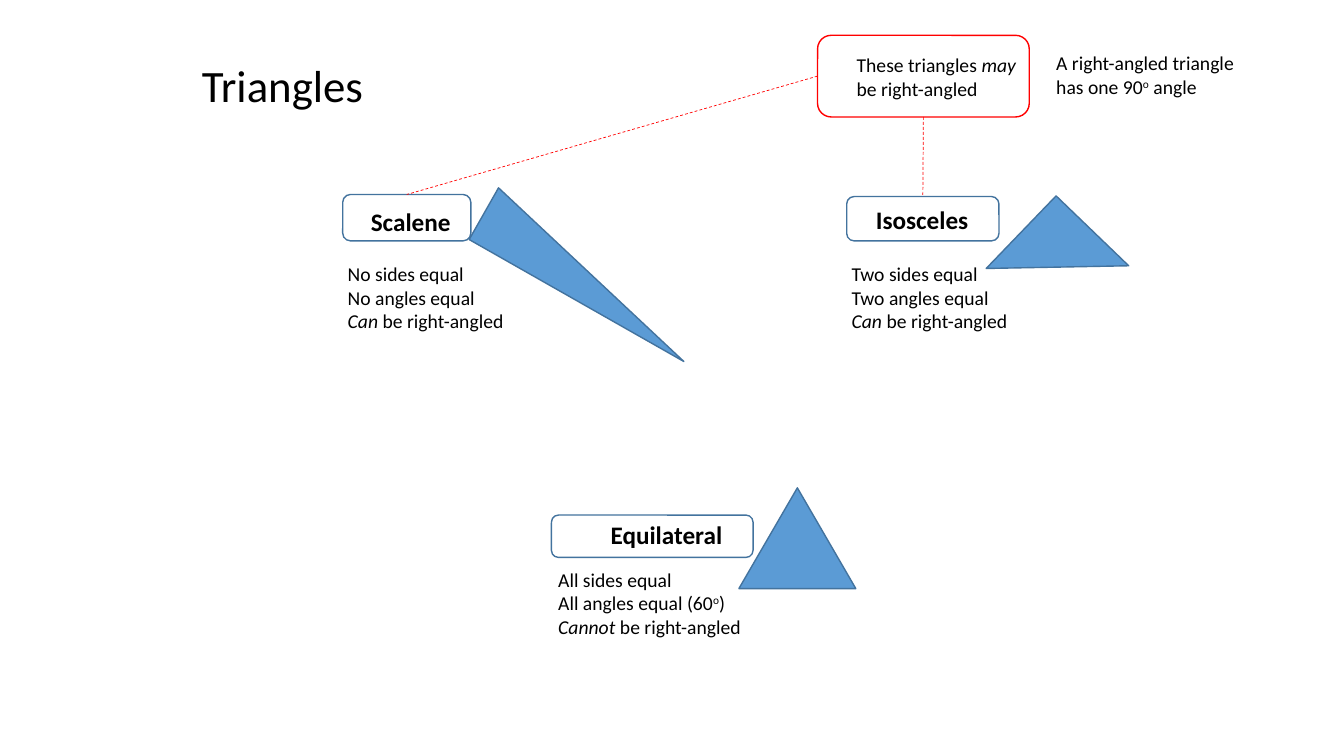
"""Build a slide that sorts triangles into scalene, isosceles and equilateral."""
import pptx
import pptx.dml.color
import pptx.enum.dml
import pptx.enum.shapes
import pptx.enum.text
import pptx.oxml.ns
import pptx.util
from lxml import etree

SHAPE = pptx.enum.shapes.MSO_SHAPE
BLUE, EDGE, RED, BLACK = "5B9BD5", "43739E", "FF0000", "000000"

prs = pptx.Presentation()
prs.slide_width = pptx.util.Inches(13.33)
prs.slide_height = pptx.util.Inches(7.5)
COL, ROW = prs.slide_width / 100, prs.slide_height / 100
s = prs.slides.add_slide(prs.slide_layouts[5])


def paint(fmt, color):
    fill = fmt if hasattr(fmt, "solid") else fmt.fill
    fill.solid()
    fill.fore_color.rgb = pptx.dml.color.RGBColor.from_string(color)


def grid(left, top, width, height):
    return [round(v) for v in (left * COL, top * ROW, width * COL, height * ROW)]


title = s.shapes.title
title.left, title.top, title.width, title.height = grid(5.92, 3.2, 86.25, 16.93)
tf = title.text_frame
tf.text = "Triangles"
tf.vertical_anchor = pptx.enum.text.MSO_ANCHOR.MIDDLE
tf.margin_left = round(9.1 * COL)
p = tf.paragraphs[0]
p.alignment = pptx.enum.text.PP_ALIGN.LEFT
p.line_spacing = 0.9
p.font.size = pptx.util.Pt(32)
p.font.name = "Calibri"
paint(p.font, BLACK)

boxes = {}
for name, place, color in [
    ("isosceles", (63, 26, 11.33, 5.87), EDGE),
    ("scalene", (25.5, 25.73, 9.53, 6.13), EDGE),
    ("right-angled", (60.83, 4.67, 15.75, 10.8), RED),
    ("equilateral", (41.03, 68.13, 15, 5.6), EDGE),
]:
    sp = s.shapes.add_shape(SHAPE.ROUNDED_RECTANGLE, *grid(*place))
    sp.shadow.inherit = False
    sp.fill.background()
    paint(sp.line, color)
    sp.line.width = pptx.util.Pt(1)
    boxes[name] = sp

for name, start_site in [("scalene", 1), ("isosceles", 2)]:
    cx = s.shapes.add_connector(pptx.enum.shapes.MSO_CONNECTOR.STRAIGHT, 0, 0, 0, 0)
    cx.begin_connect(boxes["right-angled"], start_site)
    cx.end_connect(boxes[name], 0)
    paint(cx.line, RED)
    cx.line.width = pptx.util.Pt(0.5)
    cx.line.dash_style = pptx.enum.dml.MSO_LINE.DASH
    etree.SubElement(cx._element.spPr, pptx.oxml.ns.qn("a:effectLst"))

can = [("Can", "italic"), (" be right-angled", "")]
cannot = [("Cannot", "italic"), (" be right-angled", "")]
sixty = [("All angles equal (60", ""), ("o", "super"), (")", "")]
ninety = [("has one 90", ""), ("o", "super"), (" angle", "")]
may = [("These triangles ", ""), ("may", "italic"), (" be right-angled", "")]

for place, size, wrap, lines in [
    ((64.43, 26.4, 8.55, 5.33), 18, False, ["Isosceles"]),
    ((26.85, 26.67, 7.8, 5.33), 18, False, ["Scalene"]),
    ((44.7, 68, 9.9, 5.33), 18, False, ["Equilateral"]),
    ((63, 6.4, 13.8, 7.6), 14, True, [may]),
    ((77.85, 6.13, 14.85, 7.6), 14, False, ["A right-angled triangle", ninety]),
    ((25.13, 34, 13.2, 10.8), 14, False, ["No sides equal", "No angles equal", can]),
    ((62.63, 34, 13.28, 10.8), 14, False, ["Two sides equal", "Two angles equal", can]),
    ((40.8, 74.4, 15.3, 10.8), 14, False, ["All sides equal", sixty, cannot]),
]:
    tf = s.shapes.add_textbox(*grid(*place)).text_frame
    tf.word_wrap = wrap
    for i, line in enumerate(lines):
        p = tf.add_paragraph() if i else tf.paragraphs[0]
        p.font.size = pptx.util.Pt(size)
        p.font.name = "Calibri"
        p.font.bold = size == 18
        paint(p.font, BLACK)
        for text, style in [(line, "")] if isinstance(line, str) else line:
            r = p.add_run()
            r.text = text
            if style == "italic":
                r.font.italic = True
            elif style == "super":
                r._r.get_or_add_rPr().set("baseline", "30000")

for kind, place, angle in [
    (SHAPE.RIGHT_TRIANGLE, (74.93, 28.67, 7.5, 13.33), 133.9),
    (SHAPE.RIGHT_TRIANGLE, (34.8, 32.4, 18.38, 7.87), 29.6),
    (SHAPE.ISOSCELES_TRIANGLE, (54.98, 64.53, 8.7, 13.33), 0),
]:
    sp = s.shapes.add_shape(kind, *grid(*place))
    sp.shadow.inherit = False
    sp.rotation = angle
    paint(sp.fill, BLUE)
    paint(sp.line, EDGE)
    sp.line.width = pptx.util.Pt(1)

prs.save("out.pptx")
